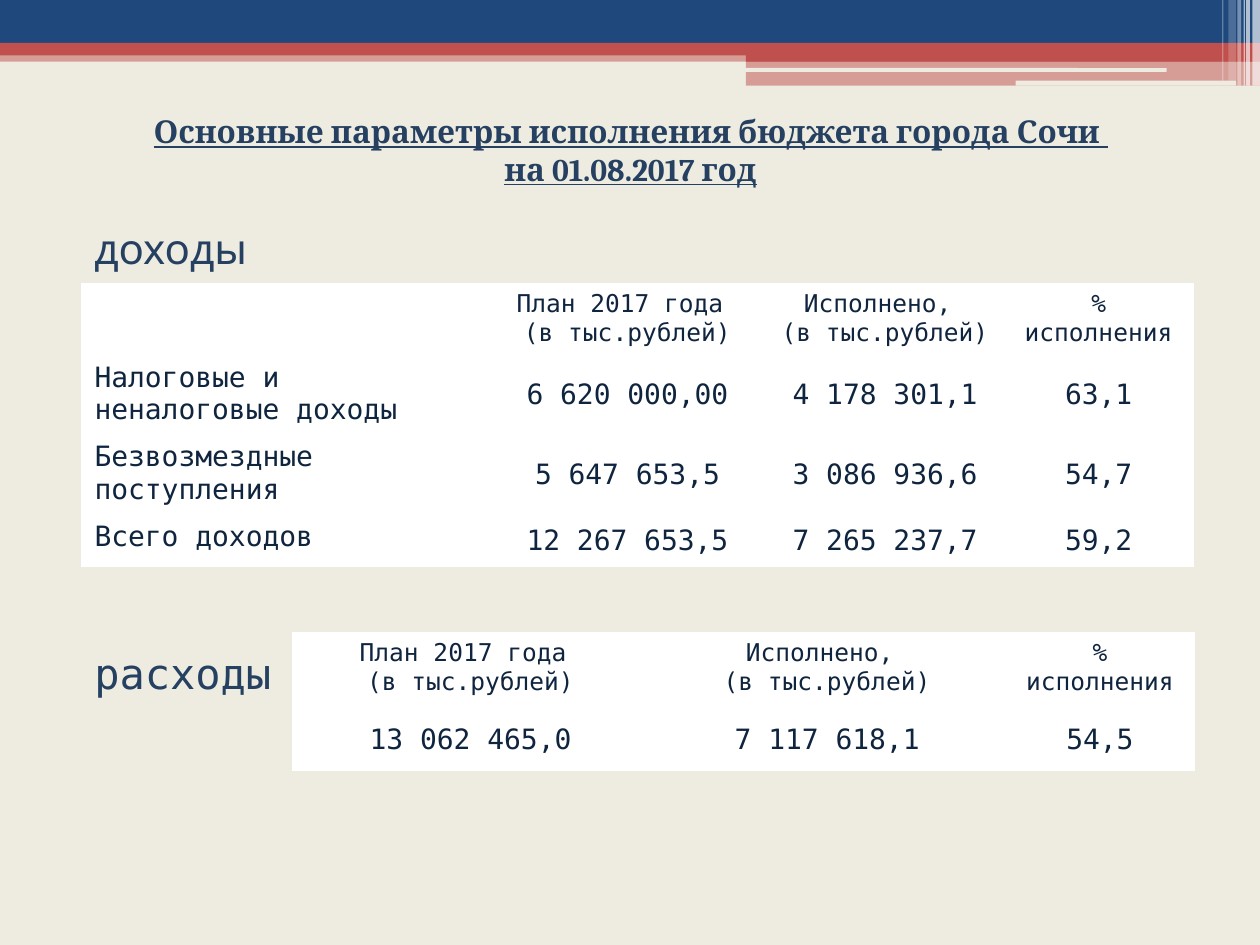
import pptx
import pptx.dml.color
import pptx.enum.shapes
import pptx.enum.text
import pptx.oxml
import pptx.oxml.ns
import pptx.util

RGBColor = pptx.dml.color.RGBColor
CREAM = RGBColor(0xEE, 0xEC, 0xE1)
BLUE = RGBColor(0x1F, 0x49, 0x7D)
RED = RGBColor(0xC0, 0x50, 0x4D)
WHITE = RGBColor(0xFF, 0xFF, 0xFF)
HEADING = RGBColor(0x25, 0x40, 0x61)
INK = RGBColor(0x0F, 0x24, 0x3E)

MONO = "DejaVu Sans Mono"
SHAPES = pptx.enum.shapes.MSO_SHAPE
CENTER = pptx.enum.text.PP_ALIGN.CENTER
LEFT = pptx.enum.text.PP_ALIGN.LEFT
MIDDLE = pptx.enum.text.MSO_ANCHOR.MIDDLE
TOP = pptx.enum.text.MSO_ANCHOR.TOP

deck = pptx.Presentation()
deck.slide_width = pptx.util.Inches(10)
deck.slide_height = pptx.util.Inches(7.5)
slide = deck.slides.add_slide(deck.slide_layouts[6])
slide.background.fill.solid()
slide.background.fill.fore_color.rgb = CREAM

# Grid of 100 columns by 75 rows of square cells
UNIT = deck.slide_width / 100


def grid(*cells):
    return [pptx.util.Emu(round(cell * UNIT)) for cell in cells]


def write(frame, text, size=16, font=MONO, color=INK, align=LEFT, bold=False, underline=False):
    for index, line in enumerate(text.split("\n")):
        paragraph = frame.add_paragraph() if index else frame.paragraphs[0]
        paragraph.alignment = align
        run = paragraph.add_run()
        run.text = line
        run.font.size = pptx.util.Pt(size)
        run.font.name = font
        run.font.color.rgb = color
        run.font.bold = bold
        run.font.underline = underline


# Header bands and the light stripes at the right edge: place, colour, opacity in %
bands = [
    (SHAPES.RECTANGLE, (0, 4, 100, 0.9), RED, 50),
    (SHAPES.RECTANGLE, (0, 0, 100, 3.4), BLUE, 100),
    (SHAPES.RECTANGLE, (0, 3.4, 100, 1), RED, 100),
    (SHAPES.RECTANGLE, (59.2, 3.9, 40.8, 1), RED, 100),
    (SHAPES.RECTANGLE, (59.2, 4.8, 40.8, 2), RED, 50),
    (SHAPES.ROUNDED_RECTANGLE, (59.1, 5.4, 33.5, 0.3), CREAM, 100),
    (SHAPES.ROUNDED_RECTANGLE, (80.6, 6.4, 17.5, 0.4), CREAM, 100),
]
stripes = [
    (99.4, 0.6, 6.8, 65), (98.9, 0.3, 6.8, 65), (98.7, 0.1, 6.8, 60),
    (98.2, 0.3, 6.8, 40), (97.5, 0.6, 6.4, 20), (97, 0.1, 6.4, 30),
]
bands += [(SHAPES.RECTANGLE, (left, 0, width, height), WHITE, opacity)
          for left, width, height, opacity in stripes]
for outline, place, color, opacity in bands:
    band = slide.shapes.add_shape(outline, *grid(*place))
    band.shadow.inherit = False
    band.line.fill.background()
    band.fill.solid()
    band.fill.fore_color.rgb = color
    if opacity < 100:
        tint = band.fill._xPr.find(".//" + pptx.oxml.ns.qn("a:srgbClr"))
        alpha = pptx.oxml.parse_xml(f'<a:alpha {pptx.oxml.ns.nsdecls("a")} val="{opacity * 1000}"/>')
        tint.append(alpha)

# Title and section headings
headings = [
    ((2.4, 8.4, 95.3, 7.1), "Основные параметры исполнения бюджета города Сочи \nна 01.08.2017 год",
     dict(size=18, font="Cambria", align=CENTER, bold=True, underline=True)),
    ((6.5, 17.2, 22, 5), "доходы", dict(size=24, font="Cabin")),
    ((6.5, 50.9, 22, 5), "расходы", dict(size=24)),
]
for place, text, style in headings:
    heading = slide.shapes.add_textbox(*grid(*place)).text_frame
    heading.word_wrap = True
    heading.auto_size = pptx.enum.text.MSO_AUTO_SIZE.SHAPE_TO_FIT_TEXT
    write(heading, text, color=HEADING, **style)

# Income and expense tables: corner, column widths, row heights, rows
measures = ["План 2017 года \n(в тыс.рублей)", "Исполнено, \n(в тыс.рублей)", "% исполнения"]
income = [
    ["", *measures],
    ["Налоговые и неналоговые доходы", "6 620 000,00", "4 178 301,1", "63,1"],
    ["Безвозмездные поступления", "5 647 653,5", "3 086 936,6", "54,7"],
    ["Всего доходов", "12 267 653,5", "7 265 237,7", "59,2"],
]
expenses = [measures, ["13 062 465,0", "7 117 618,1", "54,5"]]
tables = [
    ((6.5, 22.5), (32.3, 22, 18.9, 15), (4.1,) * 4, income),
    ((23.2, 50.2), (28.3, 28.3, 15), (6.2, 4.7), expenses),
]
for corner, widths, heights, rows in tables:
    table = slide.shapes.add_table(
        len(rows), len(widths), *grid(*corner, sum(widths), sum(heights))).table
    table.first_row = False
    table.horz_banding = False
    for column, width in zip(table.columns, grid(*widths)):
        column.width = width
    for row, height in zip(table.rows, grid(*heights)):
        row.height = height

    for r, row in enumerate(rows):
        for c, text in enumerate(row):
            cell = table.cell(r, c)
            is_header = r == 0
            is_label = len(row) == 4 and c == 0

            # White rules, heavier under the header row
            properties = cell._tc.get_or_add_tcPr()
            for side in "LRTB":
                heavy = (is_header and side == "B") or (r == 1 and side == "T")
                weight = pptx.util.Pt(3 if heavy else 1)
                properties.append(pptx.oxml.parse_xml(
                    f'<a:ln{side} {pptx.oxml.ns.nsdecls("a")} w="{weight}"><a:solidFill>'
                    f'<a:srgbClr val="{WHITE}"/></a:solidFill></a:ln{side}>'))
            cell.fill.solid()
            cell.fill.fore_color.rgb = WHITE

            cell.vertical_anchor = TOP if is_header or is_label else MIDDLE
            if text:
                write(cell.text_frame, text, size=14 if is_header else 16,
                      align=LEFT if is_label else CENTER)

deck.save("out.pptx")
